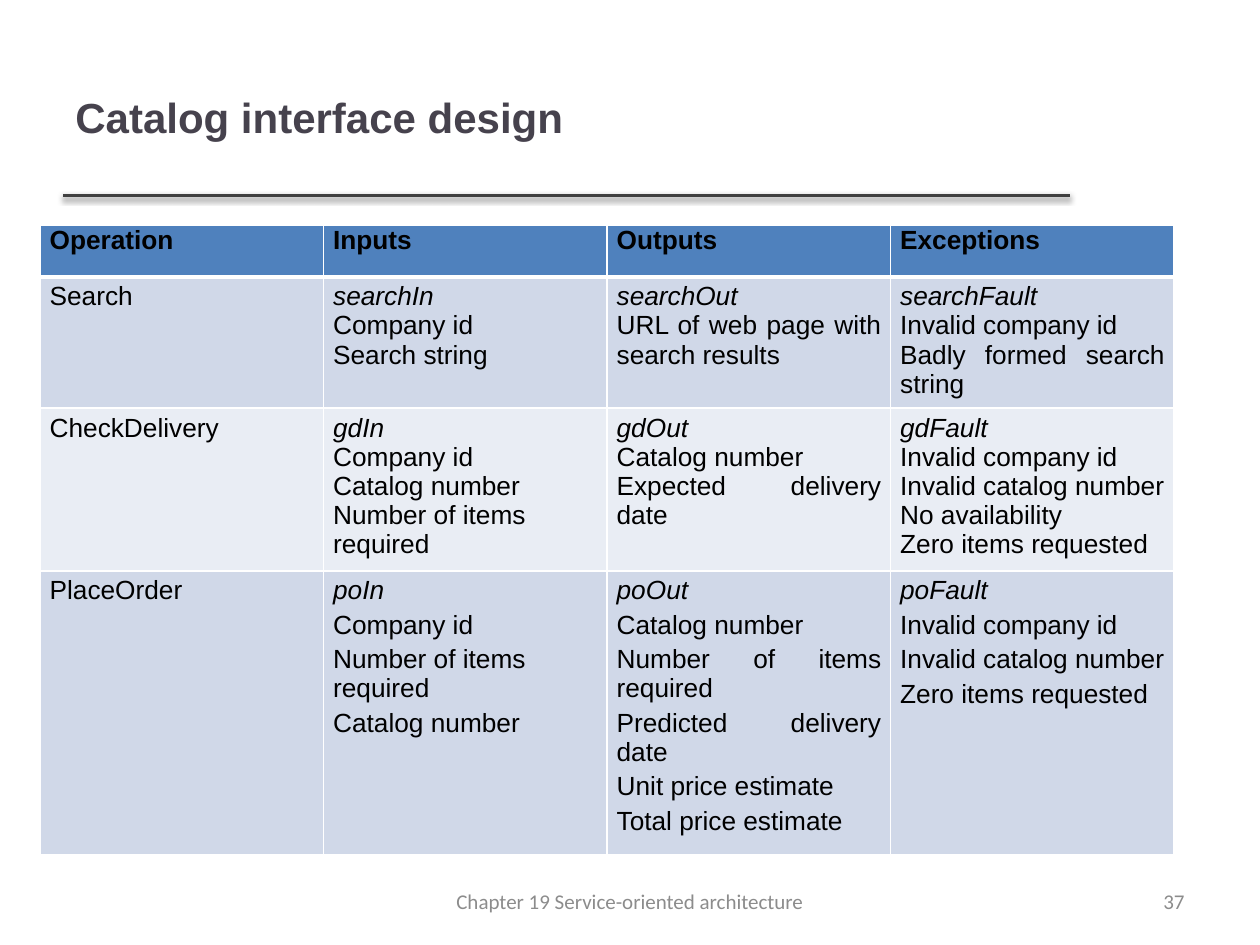
from lxml.etree import SubElement
from pptx import Presentation
from pptx.dml.color import RGBColor
from pptx.enum.shapes import MSO_CONNECTOR
from pptx.enum.text import MSO_ANCHOR, PP_ALIGN
from pptx.oxml.ns import qn
from pptx.util import Pt

HEADINGS = ["Operation", "Inputs", "Outputs", "Exceptions"]
OPERATIONS = [
    [
        ["Search"],
        ["searchIn", "Company id", "Search string"],
        ["searchOut", "URL of web page with search results"],
        ["searchFault", "Invalid company id", "Badly formed search string"],
    ],
    [
        ["CheckDelivery"],
        ["gdIn", "Company id", "Catalog number\vNumber of items required"],
        ["gdOut", "Catalog number", "Expected delivery date"],
        ["gdFault", "Invalid company id", "Invalid catalog number",
         "No availability", "Zero items requested"],
    ],
    [
        ["PlaceOrder"],
        ["poIn", "Company id", "Number of items required", "Catalog number"],
        ["poOut", "Catalog number", "Number of items required",
         "Predicted delivery date", "Unit price estimate", "Total price estimate"],
        ["poFault", "Invalid company id", "Invalid catalog number",
         "Zero items requested"],
    ],
]
TEXT_BOXES = [
    ("Catalog interface design", (36, 21.6, 574.6, 90), "Arial", 24, "46424D", True, PP_ALIGN.LEFT),
    ("37", (516, 500.5, 168, 28.75), "Calibri", 12, "8C8C8C", False, PP_ALIGN.RIGHT),
    ("Chapter 19 Service-oriented architecture", (246, 500.5, 228, 28.75),
     "Calibri", 12, "8C8C8C", False, PP_ALIGN.CENTER),
]
ROW_HEIGHTS = [29.5, 68.5, 86, 151]
COLUMN_WIDTH = 162
TABLE_LEFT, TABLE_TOP = 23, 128.75
HEADER_FILL = "4F81BD"
BAND_FILLS = ["D0D8E8", "E9EDF4"]


def color(value):
    return RGBColor.from_string(value)


def set_font(para, name, size, ink, bold=False, italic=False):
    font = para.font
    font.name, font.size = name, Pt(size)
    font.bold, font.italic = bold, italic
    font.color.rgb = color(ink)


def add_text_box(page, text, place, name, size, ink, bold, align):
    frame = page.shapes.add_textbox(*map(Pt, place)).text_frame
    frame.word_wrap = True
    frame.vertical_anchor = MSO_ANCHOR.MIDDLE
    para = frame.paragraphs[0]
    para.text = text
    para.alignment = align
    set_font(para, name, size, ink, bold)


def add_rule(page):
    rule = page.shapes.add_connector(
        MSO_CONNECTOR.STRAIGHT, Pt(36), Pt(111.6), Pt(611.3), Pt(111.6))
    rule.line.color.rgb = color("404040")
    rule.line.width = Pt(2)
    effects = SubElement(rule._element.spPr, qn("a:effectLst"))
    shadow = SubElement(effects, qn("a:outerShdw"), blurRad=str(Pt(3.1)),
                        dist=str(Pt(1.6)), dir="5400000", rotWithShape="0")
    ink = SubElement(shadow, qn("a:srgbClr"), val="000000")
    SubElement(ink, qn("a:alpha"), val="38000")


def set_borders(cell, widths):
    properties = cell._tc.get_or_add_tcPr()
    for side, width in widths.items():
        line = SubElement(properties, qn(f"a:ln{side}"), w=str(Pt(width)))
        fill = SubElement(line, qn("a:solidFill"))
        SubElement(fill, qn("a:srgbClr"), val="FFFFFF")


def fill_cell(cell, lines, row, column):
    header = row == 0
    cell.margin_left = cell.margin_right = Pt(5.4)
    cell.margin_top = Pt(0 if header else 3)
    cell.margin_bottom = Pt(0)
    set_borders(cell, {"L": 1, "R": 1, "T": 3 if row == 1 else 1, "B": 3 if header else 1})
    cell.fill.solid()
    cell.fill.fore_color.rgb = color(HEADER_FILL if header else BAND_FILLS[(row - 1) % 2])
    spaced = row in (0, len(OPERATIONS))
    frame = cell.text_frame
    for index, line in enumerate(lines):
        para = frame.add_paragraph() if index else frame.paragraphs[0]
        para.text = line
        para.alignment = PP_ALIGN.LEFT if column == 1 else PP_ALIGN.JUSTIFY
        para.space_after = Pt(3 if spaced else 0)
        message_name = not header and column > 0 and index == 0
        set_font(para, "Arial", 15, "000000", header, message_name)


def add_operations_table(page):
    rows = [[[heading] for heading in HEADINGS]] + OPERATIONS
    table = page.shapes.add_table(
        len(rows), len(HEADINGS), Pt(TABLE_LEFT), Pt(TABLE_TOP),
        Pt(COLUMN_WIDTH * len(HEADINGS)), Pt(sum(ROW_HEIGHTS))).table
    for column in table.columns:
        column.width = Pt(COLUMN_WIDTH)
    for row, cells in enumerate(rows):
        table.rows[row].height = Pt(ROW_HEIGHTS[row])
        for column, lines in enumerate(cells):
            fill_cell(table.cell(row, column), lines, row, column)


def main():
    deck = Presentation()
    deck.slide_width, deck.slide_height = Pt(720), Pt(540)
    page = deck.slides.add_slide(deck.slide_layouts[6])
    add_rule(page)
    for text_box in TEXT_BOXES:
        add_text_box(page, *text_box)
    add_operations_table(page)
    deck.save("out.pptx")


if __name__ == "__main__":
    main()
